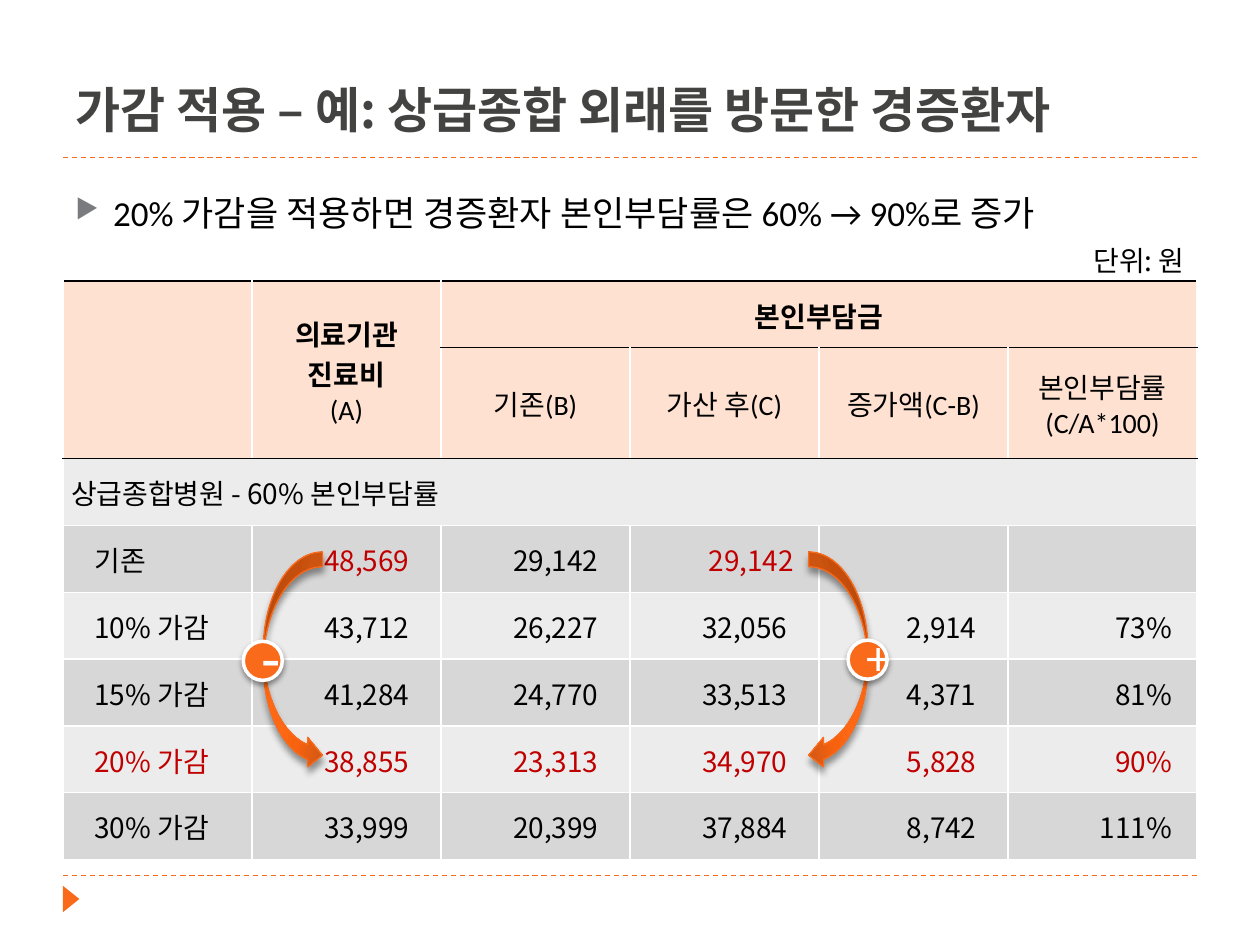
from lxml.etree import SubElement
from pptx import Presentation
from pptx.dml.color import RGBColor
from pptx.enum.dml import MSO_LINE
from pptx.enum.shapes import MSO_CONNECTOR, MSO_SHAPE
from pptx.enum.text import MSO_ANCHOR, PP_ALIGN
from pptx.oxml import parse_xml
from pptx.oxml.ns import nsdecls, qn
from pptx.util import Pt

KOREAN, LATIN = "Noto Sans CJK KR", "Calibri"
ORANGE = RGBColor(0xF9, 0x6A, 0x1B)
WHITE = RGBColor(0xFF, 0xFF, 0xFF)
BLACK = RGBColor(0, 0, 0)
RED = RGBColor(0xC0, 0, 0)
TITLE_GRAY = RGBColor(0x43, 0x43, 0x42)
PEACH = RGBColor(0xFE, 0xE1, 0xD1)
LIGHT = RGBColor(0xEC, 0xEC, 0xEC)
DARK = RGBColor(0xD7, 0xD7, 0xD8)
GRADIENT = [(0, "CC5716"), (30, "F8620F"), (45, "FF6815"),
            (55, "FF6815"), (73, "F8620F"), (100, "CC5716")]

TITLE = "가감 적용 – 예: 상급종합 외래를 방문한 경증환자"
MESSAGE = "20% 가감을 적용하면 경증환자 본인부담률은 60% → 90%로 증가"
UNIT = "단위: 원"
GROUP = "상급종합병원 - 60% 본인부담률"
COST_HEADER = [("의료기관\n진료비\n", True), ("(A)", False)]
SHARE_HEADER = "본인부담금"
SUB_HEADERS = ["기존(B)", "가산 후(C)", "증가액(C-B)", "본인부담률\n(C/A*100)"]
ROWS = [
    ["기존", "48,569", "29,142", "29,142", "", ""],
    ["10% 가감", "43,712", "26,227", "32,056", "2,914", "73%"],
    ["15% 가감", "41,284", "24,770", "33,513", "4,371", "81%"],
    ["20% 가감", "38,855", "23,313", "34,970", "5,828", "90%"],
    ["30% 가감", "33,999", "20,399", "37,884", "8,742", "111%"],
]
RED_CELLS = {(0, 1), (0, 3)} | {(3, column) for column in range(6)}
ARROWS = [(150.5, False), (462.2, True)]
SIGNS = [("-", 36, 139, 366.5), ("+", 28, 484.6, 365.8)]

LEFT, WIDTH = 36, 648
TABLE_TOP, COLUMN_WIDTH = 160.5, 108
ROW_HEIGHTS = [38.2, 63.4] + [38.2] * 6


def write(frame, text, size=16, font=KOREAN, color=BLACK, bold=False,
          align=PP_ALIGN.LEFT, spacing=None):
    frame.word_wrap = True
    paragraph = frame.paragraphs[0]
    paragraph.alignment = align
    if spacing:
        paragraph.line_spacing = spacing
    segments = [(text, bold)] if isinstance(text, str) else text
    for words, is_bold in segments:
        for index, line in enumerate(words.split("\n")):
            if index:
                paragraph.add_line_break()
            if not line:
                continue
            run = paragraph.add_run()
            run.text = line
            run.font.size = Pt(size)
            run.font.bold = is_bold
            run.font.color.rgb = color
            run.font.name = font
            SubElement(run._r.get_or_add_rPr(), qn("a:ea"), typeface=KOREAN)
    return paragraph


def add_text(slide, box, text, anchor=MSO_ANCHOR.TOP, **style):
    frame = slide.shapes.add_textbox(*map(Pt, box)).text_frame
    frame.vertical_anchor = anchor
    return write(frame, text, **style)


def add_shape(slide, kind, box, line_color=None, line_width=0.75):
    shape = slide.shapes.add_shape(kind, *map(Pt, box))
    shape.shadow.inherit = False
    shape.fill.solid()
    shape.fill.fore_color.rgb = ORANGE
    if line_color is None:
        shape.line.fill.background()
    else:
        shape.line.color.rgb = line_color
        shape.line.width = Pt(line_width)
    return shape


def add_shadow(shape, blur, distance):
    effects = shape._element.spPr.find(qn("a:effectLst"))
    effects.append(parse_xml(
        f'<a:outerShdw {nsdecls("a")} blurRad="{Pt(blur)}" dist="{Pt(distance)}" '
        'dir="5400000" rotWithShape="0"><a:srgbClr val="000000">'
        '<a:alpha val="40000"/></a:srgbClr></a:outerShdw>'))


def add_gradient(shape):
    stops = "".join(f'<a:gs pos="{position * 1000}"><a:srgbClr val="{color}"/></a:gs>'
                    for position, color in GRADIENT)
    solid = shape._element.spPr.find(qn("a:solidFill"))
    solid.getparent().replace(solid, parse_xml(
        f'<a:gradFill {nsdecls("a")} rotWithShape="1"><a:gsLst>{stops}</a:gsLst>'
        '<a:lin ang="960000" scaled="0"/></a:gradFill>'))


def add_rule(slide, top):
    rule = slide.shapes.add_connector(
        MSO_CONNECTOR.STRAIGHT, Pt(LEFT), Pt(top), Pt(LEFT + WIDTH), Pt(top))
    rule.line.color.rgb = ORANGE
    rule.line.width = Pt(0.75)
    rule.line.dash_style = MSO_LINE.DASH
    SubElement(rule._element.spPr, qn("a:effectLst"))


def format_cell(cell, fill, top=WHITE, bottom=WHITE, left=0.72, right=0.72):
    properties = cell._tc.get_or_add_tcPr()
    for side, color in (("L", WHITE), ("R", WHITE), ("T", top), ("B", bottom)):
        properties.append(parse_xml(
            f'<a:ln{side} {nsdecls("a")} w="{Pt(1)}"><a:solidFill>'
            f'<a:srgbClr val="{color}"/></a:solidFill></a:ln{side}>'))
    cell.fill.solid()
    cell.fill.fore_color.rgb = fill
    cell.vertical_anchor = MSO_ANCHOR.MIDDLE
    cell.margin_left, cell.margin_right = Pt(left), Pt(right)
    cell.margin_top, cell.margin_bottom = Pt(0.72), Pt(0)


def add_cost_table(slide):
    table = slide.shapes.add_table(
        len(ROW_HEIGHTS), 6, Pt(LEFT), Pt(TABLE_TOP), Pt(WIDTH), Pt(sum(ROW_HEIGHTS))).table
    table.first_row = table.horz_banding = False
    for column in table.columns:
        column.width = Pt(COLUMN_WIDTH)
    for row, height in zip(table.rows, ROW_HEIGHTS):
        row.height = Pt(height)
    for start, end in (((0, 0), (1, 0)), ((0, 1), (1, 1)), ((0, 2), (0, 5)), ((2, 0), (2, 5))):
        table.cell(*start).merge(table.cell(*end))

    for column in range(6):
        for row in range(2):
            format_cell(table.cell(row, column), PEACH, BLACK, BLACK)
        format_cell(table.cell(2, column), LIGHT, BLACK, left=4.7)
    header = {"font": LATIN, "align": PP_ALIGN.CENTER}
    write(table.cell(0, 1).text_frame, COST_HEADER, **header)
    write(table.cell(0, 2).text_frame, SHARE_HEADER, bold=True, **header)
    for column, text in enumerate(SUB_HEADERS, 2):
        write(table.cell(1, column).text_frame, text, **header)
    write(table.cell(2, 0).text_frame, GROUP)

    for row, values in enumerate(ROWS):
        for column, text in enumerate(values):
            cell = table.cell(row + 3, column)
            flush = column == 5 or (row, column) == (0, 3)
            format_cell(cell, LIGHT if row % 2 else DARK,
                        left=18 if column == 0 else 0.72,
                        right=0.72 if column == 0 else 14.4 if flush else 18)
            write(cell.text_frame, text,
                  color=RED if (row, column) in RED_CELLS else BLACK,
                  align=PP_ALIGN.RIGHT if column else PP_ALIGN.LEFT)


def main():
    presentation = Presentation()
    presentation.slide_width, presentation.slide_height = Pt(720), Pt(540)
    slide = presentation.slides.add_slide(presentation.slide_layouts[6])

    add_rule(slide, 500.4)
    add_rule(slide, 90)
    marker = add_shape(slide, MSO_SHAPE.ISOSCELES_TRIANGLE, (33.1, 509, 15.1, 9.4))
    marker.rotation = 90
    add_text(slide, (LEFT, 12.2, WIDTH, 70.6), TITLE, MSO_ANCHOR.BOTTOM,
             size=28, color=TITLE_GRAY, bold=True, spacing=1.2)
    add_cost_table(slide)

    for left, flipped in ARROWS:
        arrow = add_shape(slide, MSO_SHAPE.CURVED_RIGHT_ARROW, (left, 315.4, 33.8, 124.6), ORANGE)
        add_gradient(arrow)
        add_shadow(arrow, 4, 3.4)
        if flipped:
            arrow._element.spPr.find(qn("a:xfrm")).set("flipH", "1")
    for sign, size, left, top in SIGNS:
        badge = add_shape(slide, MSO_SHAPE.OVAL, (left, top, 22.3, 22.3), WHITE, 2)
        add_shadow(badge, 3, 2)
        write(badge.text_frame, sign, size=size, font=LATIN, color=WHITE,
              align=PP_ALIGN.CENTER, spacing=0.9)

    add_text(slide, (553, 135.4, 131, 26.6), UNIT, align=PP_ALIGN.RIGHT)
    message = add_text(slide, (LEFT, 105.8, WIDTH, 366.5), MESSAGE, size=20, font=LATIN)
    message.space_before = Pt(18)
    properties = message._p.get_or_add_pPr()
    properties.set("marL", str(Pt(21.6)))
    properties.set("indent", str(-Pt(21.6)))
    color = SubElement(properties, qn("a:buClr"))
    SubElement(color, qn("a:srgbClr"), val="797B7E")
    SubElement(properties, qn("a:buSzPct"), val="76000")
    SubElement(properties, qn("a:buChar"), char="▶")
    presentation.save("out.pptx")


if __name__ == "__main__":
    main()
